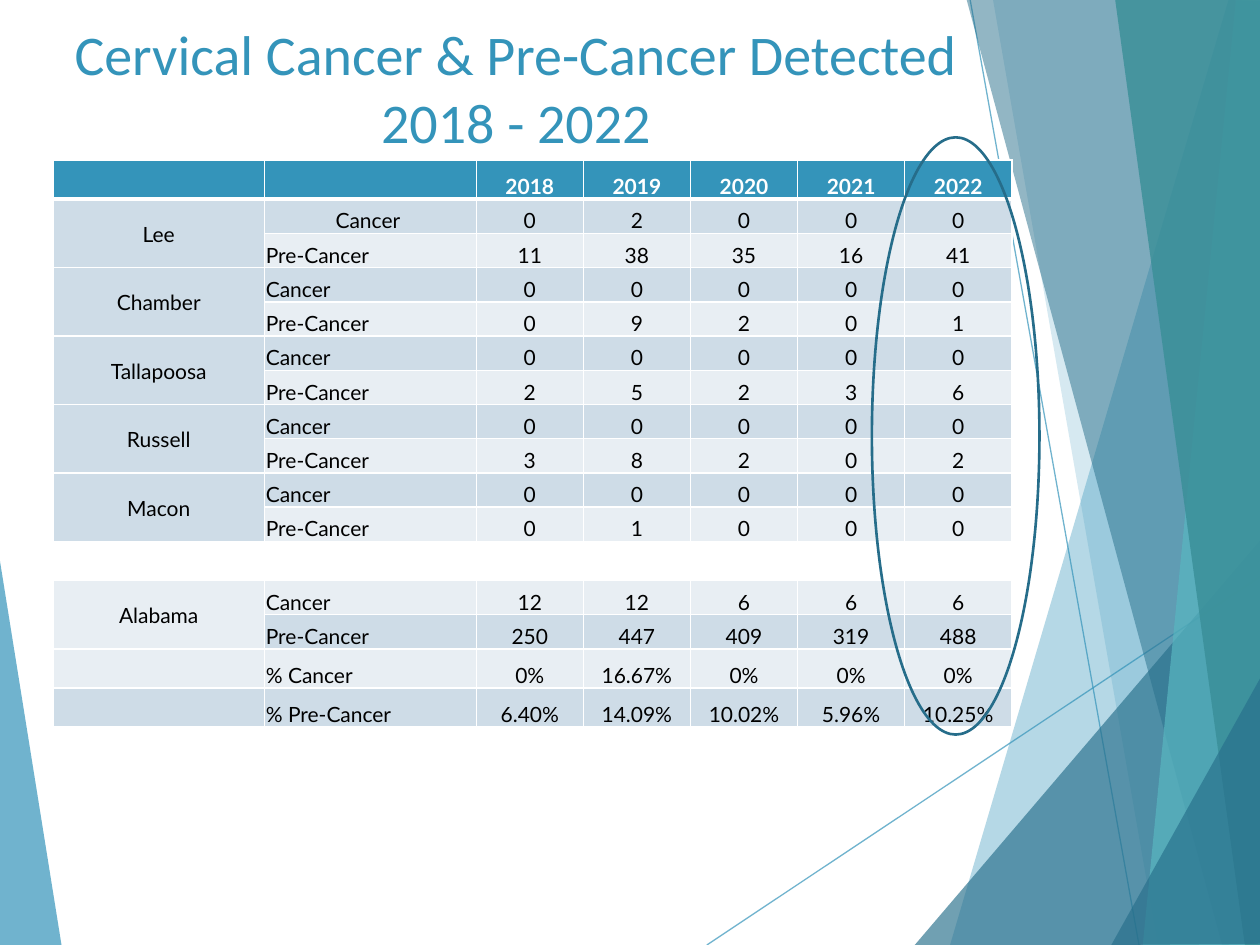
from pptx import Presentation
from pptx import util as u
from pptx.dml.color import RGBColor
from pptx.enum import shapes, text
from pptx.oxml import parse_xml
from pptx.oxml.ns import nsdecls, qn

BLUE = RGBColor(0x34, 0x94, 0xBA)
DEEP = RGBColor(0x27, 0x6F, 0x8B)
TEAL = RGBColor(0x58, 0xB6, 0xC0)
SEA = RGBColor(0x3A, 0x8F, 0x98)
RING = RGBColor(0x26, 0x6D, 0x8A)
DARK = RGBColor(0xCE, 0xDC, 0xE7)
PALE = RGBColor(0xE8, 0xEE, 0xF3)
WHITE = RGBColor(0xFF, 0xFF, 0xFF)
BLACK = RGBColor(0, 0, 0)

RAYS = [
    (((-0.01, 4.39), (0.49, 7.51), (-0.01, 7.5)), BLUE, 70),
    (((9.75, 0), (7.54, 7.5), (10.02, 7.51), (10.01, 0.01)), BLUE, 36),
    (((7.88, -0.01), (9.19, 7.5), (10.01, 7.5), (10.01, -0.01)), BLUE, 20),
    (((7.26, 7.5), (10, 4.29), (10.01, 7.5)), DEEP, 66),
    (((7.67, -0.01), (9.7, 7.5), (10.01, 7.49), (10.01, -0.01)), DEEP, 50),
    (((9.81, -0.01), (9.07, 7.5), (10.01, 7.5), (10, -0.01)), TEAL, 70),
    (((8.85, -0.01), (9.88, 7.5), (10.02, 7.5), (10, -0.01)), SEA, 82),
    (((8.82, 7.5), (10.02, 5.35), (10.02, 7.49)), DEEP, 66),
]
BEAMS = [((5.61, 7.5), (10.01, 4.57)), ((7.7, 0), (9.04, 7.5))]

WIDTHS = [1.68] * 2 + [0.85] * 5
ROWS = [
    ["", "", "2018", "2019", "2020", "2021", "2022"],
    ["Lee", "Cancer ", "0", "2", "0", "0", "0"],
    ["", "Pre-Cancer", "11", "38", "35", "16", "41"],
    ["Chamber", "Cancer", "0", "0", "0", "0", "0"],
    ["", "Pre-Cancer", "0", "9", "2", "0", "1"],
    ["Tallapoosa", "Cancer", "0", "0", "0", "0", "0"],
    ["", "Pre-Cancer", "2", "5", "2", "3", "6"],
    ["Russell", "Cancer", "0", "0", "0", "0", "0"],
    ["", "Pre-Cancer", "3", "8", "2", "0", "2"],
    ["Macon", "Cancer", "0", "0", "0", "0", "0"],
    ["", "Pre-Cancer", "0", "1", "0", "0", "0"],
    [""] * 7,
    ["Alabama", "Cancer", "12", "12", "6", "6", "6"],
    ["", "Pre-Cancer", "250", "447", "409", "319", "488"],
    ["", "% Cancer", "0%", "16.67%", "0%", "0%", "0%"],
    ["", "% Pre-Cancer", "6.40%", "14.09%", "10.02%", "5.96%", "10.25%"],
]


def fade(fill, alpha):
    """Make a solid fill see-through, with alpha in percent."""
    tone = fill._xPr.find(".//" + qn("a:srgbClr"))
    tone.append(parse_xml(f'<a:alpha {nsdecls("a")} val="{alpha * 1000}"/>'))


def add_ray(slide, points, color, alpha):
    """Draw one translucent polygon of the backdrop."""
    spots = [(u.Inches(x), u.Inches(y)) for x, y in points]
    pen = slide.shapes.build_freeform(*spots[0])
    pen.add_line_segments(spots[1:], close=True)
    ray = pen.convert_to_shape()
    ray.shadow.inherit = False
    ray.fill.solid()
    ray.fill.fore_color.rgb = color
    fade(ray.fill, alpha)
    ray.line.fill.background()


def add_beam(slide, start, end):
    """Draw one thin backdrop line."""
    ends = [u.Inches(n) for n in start + end]
    beam = slide.shapes.add_connector(shapes.MSO_CONNECTOR.STRAIGHT, *ends)
    beam.line.color.rgb = BLUE
    beam.line.width = u.Pt(0.75)
    fade(beam.line.fill, 70)
    beam._element.spPr.append(parse_xml(f'<a:effectLst {nsdecls("a")}/>'))


def add_run(para, words, size, face, color, bold=False):
    """Add one styled run to a paragraph."""
    run = para.add_run()
    run.text = words
    font = run.font
    font.size, font.name, font.bold = u.Pt(size), face, bold
    font.color.rgb = color


def add_title(slide):
    """Add the two-line heading."""
    box = slide.shapes.add_textbox(*map(u.Inches, (0.17, 0.11, 7.85, 1.14)))
    frame = box.text_frame
    frame.word_wrap = True
    para = frame.paragraphs[0]
    para.alignment = text.PP_ALIGN.CENTER
    add_run(para, "Cervical Cancer & Pre-Cancer Detected", 32, "Calibri", BLUE)
    para.add_line_break()
    add_run(para, "2018 - 2022", 32, "Calibri", BLUE)


def add_edges(cell, base):
    """Give a cell white borders, with its own bottom width in points."""
    props = cell._tc.get_or_add_tcPr()
    for side, width in zip("LRTB", (1, 1, 1, base)):
        props.append(parse_xml(
            f'<a:ln{side} {nsdecls("a")} w="{u.Pt(width)}"><a:solidFill>'
            f'<a:srgbClr val="{WHITE}"/></a:solidFill></a:ln{side}>'))


def fill_cell(cell, words, row, col):
    """Style one cell by its place in the table and write its text."""
    head = row == 0
    add_edges(cell, 3 if head else 1)
    if any(ROWS[row]):
        cell.fill.solid()
        cell.fill.fore_color.rgb = BLUE if head else DARK if row % 2 else PALE
    else:
        cell.fill.background()
    cell.margin_left = cell.margin_right = cell.margin_top = u.Inches(0.01)
    cell.margin_bottom = 0
    anchor = text.MSO_ANCHOR
    cell.vertical_anchor = anchor.BOTTOM if col else anchor.MIDDLE
    para = cell.text_frame.paragraphs[0]
    left = col == 1 and row != 1
    para.alignment = text.PP_ALIGN.LEFT if left else text.PP_ALIGN.CENTER
    add_run(para, words, 12, "Lato", WHITE if head else BLACK, head)


def add_grid(slide):
    """Add the table of counts by county and year."""
    place = map(u.Inches, (0.42, 1.27, 7.6, 4.35))
    grid = slide.shapes.add_table(len(ROWS), len(WIDTHS), *place).table
    grid.first_row = grid.horz_banding = False
    for col, width in zip(grid.columns, WIDTHS):
        col.width = u.Inches(width)
    for r, row in enumerate(ROWS):
        for c, words in enumerate(row):
            fill_cell(grid.cell(r, c), words, r, c)
        if row[0]:
            grid.cell(r, 0).merge(grid.cell(r + 1, 0))


def add_ring(slide):
    """Circle the last year's column."""
    place = map(u.Inches, (6.92, 1.09, 1.33, 4.74))
    ring = slide.shapes.add_shape(shapes.MSO_SHAPE.OVAL, *place)
    ring.shadow.inherit = False
    ring.fill.background()
    ring.line.color.rgb = RING
    ring.line.width = u.Pt(1.5)


def main():
    """Build the slide and save it."""
    deck = Presentation()
    deck.slide_width, deck.slide_height = u.Inches(10), u.Inches(7.5)
    slide = deck.slides.add_slide(deck.slide_layouts[6])
    add_ray(slide, *RAYS[0])
    for beam in BEAMS:
        add_beam(slide, *beam)
    for ray in RAYS[1:]:
        add_ray(slide, *ray)
    add_title(slide)
    add_grid(slide)
    add_ring(slide)
    deck.save("out.pptx")


if __name__ == "__main__":
    main()
